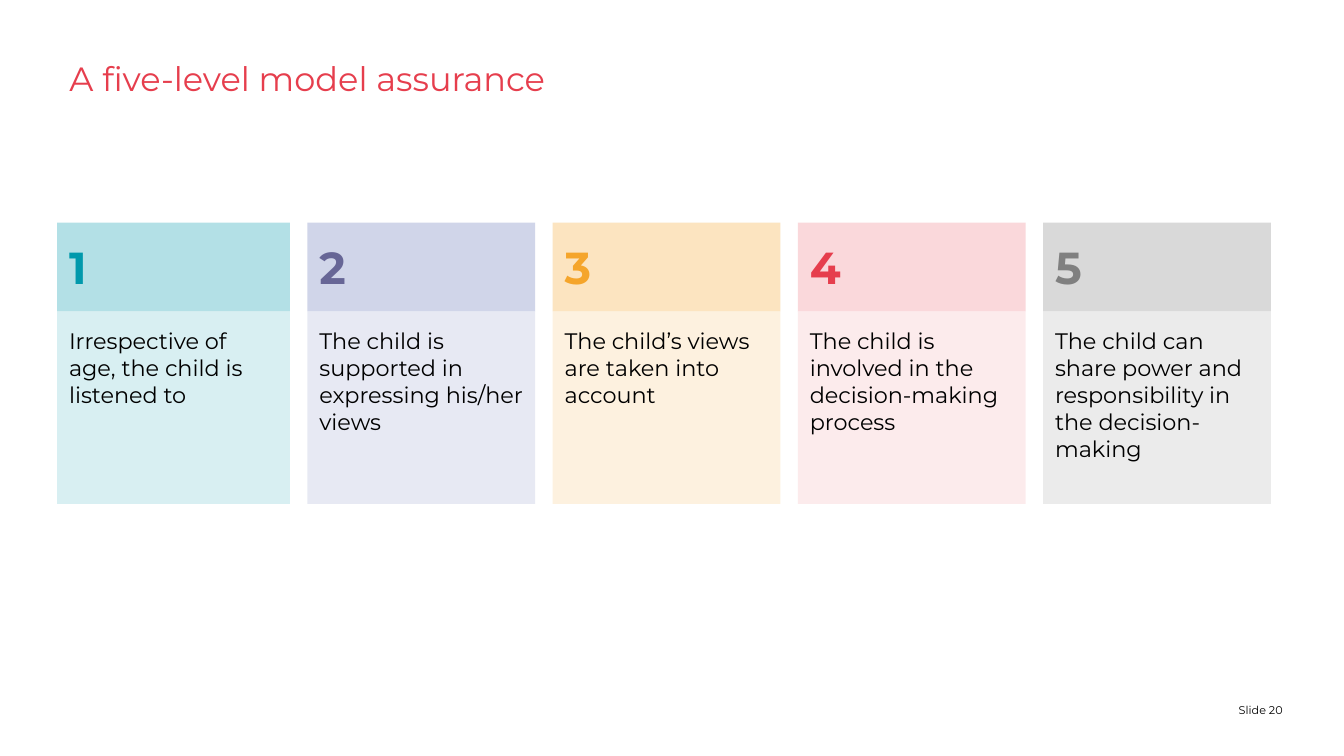
from lxml.etree import SubElement
from pptx import Presentation
from pptx.dml.color import RGBColor
from pptx.enum.shapes import MSO_SHAPE
from pptx.enum.text import MSO_ANCHOR, PP_ALIGN
from pptx.oxml.ns import qn
from pptx.util import Cm, Pt

FONT = "Montserrat"
BLACK = RGBColor(0x00, 0x00, 0x00)
TEAL, PALE_TEAL = RGBColor(0x00, 0x99, 0xAC), RGBColor(0xB3, 0xE0, 0xE6)
PURPLE, PALE_PURPLE = RGBColor(0x67, 0x66, 0x96), RGBColor(0xD0, 0xD5, 0xE9)
ORANGE, PALE_ORANGE = RGBColor(0xF5, 0xA5, 0x2B), RGBColor(0xFC, 0xE4, 0xC0)
RED, PALE_RED = RGBColor(0xE6, 0x3E, 0x4D), RGBColor(0xFA, 0xD8, 0xDB)
GREY, PALE_GREY = RGBColor(0x80, 0x80, 0x80), RGBColor(0xD9, 0xD9, 0xD9)

LEVELS = [
    ("Irrespective of age, the child is listened to", TEAL, PALE_TEAL),
    ("The child is supported in expressing his/her views", PURPLE, PALE_PURPLE),
    ("The child’s views are taken into account", ORANGE, PALE_ORANGE),
    ("The child is involved in the decision-making process", RED, PALE_RED),
    ("The child can share power and responsibility in the decision-making", GREY, PALE_GREY),
]
FIRST_LEFT, FIRST_WIDTH = 1.44, 5.87
SECOND_LEFT, WIDTH, PITCH = 7.75, 5.74, 6.18
HEADER_TOP, HEADER_HEIGHT, BODY_HEIGHT = 5.61, 2.24, 4.85


def write(shape, text, size, color, insets, anchor=MSO_ANCHOR.TOP, align=PP_ALIGN.LEFT, bold=False):
    frame = shape.text_frame
    frame.word_wrap = True
    frame.vertical_anchor = anchor
    frame.margin_left, frame.margin_top, frame.margin_right, frame.margin_bottom = map(Cm, insets)
    frame.text = text
    paragraph = frame.paragraphs[0]
    paragraph.alignment = align
    font = paragraph.runs[0].font
    font.name, font.size, font.bold = FONT, Pt(size), bold
    font.color.rgb = color
    return paragraph


def add_panel(left, top, width, height, fill):
    shape = slide.shapes.add_shape(MSO_SHAPE.RECTANGLE, Cm(left), Cm(top), Cm(width), Cm(height))
    shape.shadow.inherit = False
    shape.fill.solid()
    shape.fill.fore_color.rgb = fill
    shape.line.fill.background()
    return shape


presentation = Presentation()
presentation.slide_width, presentation.slide_height = Cm(33.87), Cm(19.05)
slide = presentation.slides.add_slide(presentation.slide_layouts[6])

# Title
title = slide.shapes.add_textbox(Cm(1.5), Cm(1.5), Cm(30.86), Cm(2.24))
write(title, "A five-level model assurance", 24, RED, (0.25, 0.13, 0.25, 0.13)).line_spacing = 0.83

# Five levels: numbered header above a half-transparent body
for index, (description, accent, tint) in enumerate(LEVELS):
    left, width = FIRST_LEFT, FIRST_WIDTH
    if index > 0:
        left, width = SECOND_LEFT + (index - 1) * PITCH, WIDTH
    header = add_panel(left, HEADER_TOP, width, HEADER_HEIGHT, tint)
    write(header, str(index + 1), 32, accent, (0.3, 0, 0.3, 0), MSO_ANCHOR.MIDDLE, bold=True)

    body = add_panel(left, HEADER_TOP + HEADER_HEIGHT, width, BODY_HEIGHT, tint)
    body_color = body.fill._xPr.find(qn("a:solidFill"))[0]
    SubElement(body_color, qn("a:alpha")).set("val", "50000")
    write(body, description, 16, BLACK, (0.3, 0.4, 0.3, 0.13))

# Slide number
slide_number = slide.shapes.add_textbox(Cm(30.23), Cm(17.45), Cm(2.1), Cm(0.6))
write(slide_number, "Slide 20", 8, BLACK, (0, 0, 0, 0), MSO_ANCHOR.BOTTOM, PP_ALIGN.RIGHT)

presentation.save("out.pptx")
